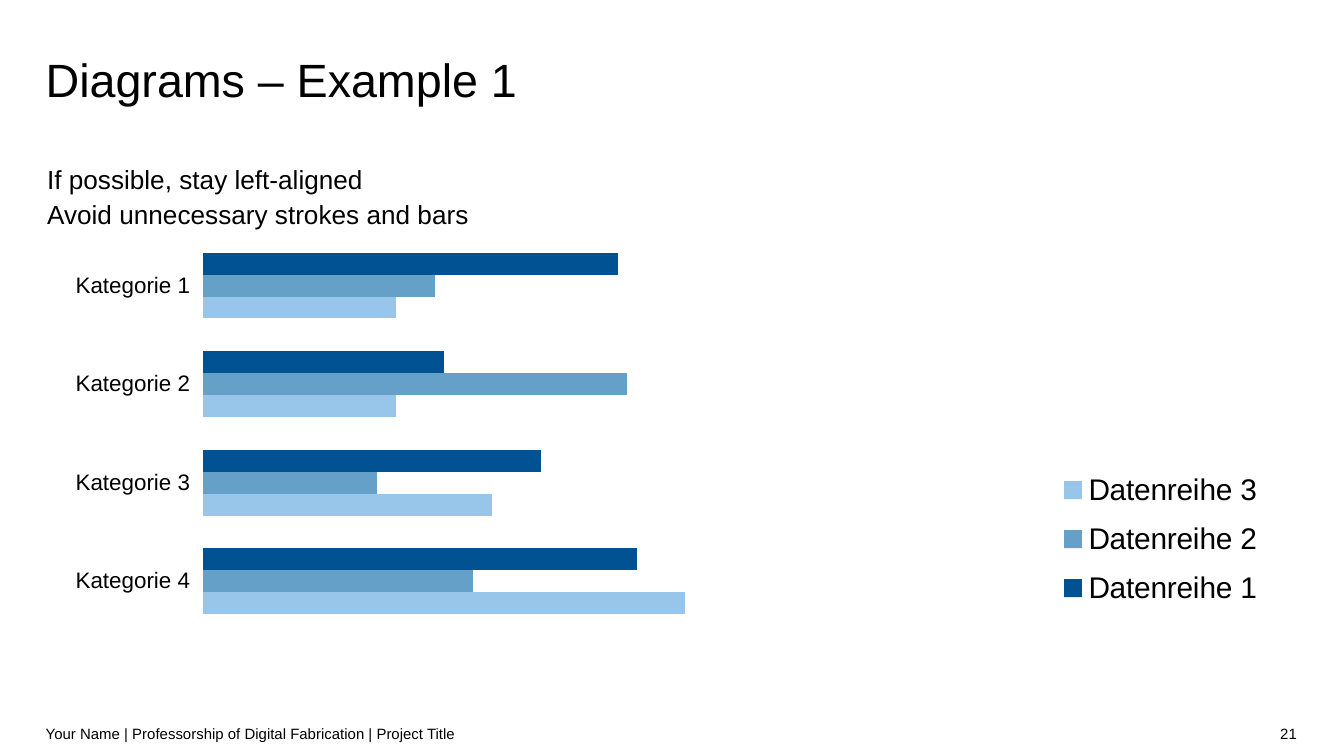
from lxml import etree
from pptx import Presentation
from pptx import util as u
from pptx.chart.data import CategoryChartData
from pptx.dml.color import RGBColor
from pptx.enum import chart as charts, text
from pptx.oxml import ns

FONT = "Arial"
BLACK = "000000"
SERIES = [
    ("Datenreihe 1", (86, 50, 70, 90), "005293"),
    ("Datenreihe 2", (48, 88, 36, 56), "64A0C8"),
    ("Datenreihe 3", (40, 40, 60, 100), "98C6EA"),
]


def colour(value):
    return RGBColor.from_string(value)


def style(font, size):
    font.name = FONT
    font.size = u.Pt(size)
    font.color.rgb = colour(BLACK)


def place(shape, box):
    shape.left, shape.top, shape.width, shape.height = map(u.Inches, box)


def write(shape, lines, size, align=text.PP_ALIGN.LEFT, inset=0,
          anchor=text.MSO_ANCHOR.TOP):
    """Fill a text shape with one paragraph of lines."""
    frame = shape.text_frame
    frame.word_wrap = True
    frame.auto_size = text.MSO_AUTO_SIZE.NONE
    frame.vertical_anchor = anchor
    frame.margin_left = frame.margin_right = 0
    frame.margin_top = frame.margin_bottom = u.Inches(inset)
    para = frame.paragraphs[0]
    para.alignment = align
    para.space_before = u.Pt(0)
    for index, line in enumerate(lines):
        if index:
            para.add_line_break()
        span = para.add_run()
        span.text = line
        style(span.font, size)
    return para


def add_heading(page, box):
    title = page.shapes.title
    place(title, box)
    write(title, ["Diagrams – Example 1"], 25).line_spacing = u.Pt(32)
    title.text_frame.auto_size = text.MSO_AUTO_SIZE.SHAPE_TO_FIT_TEXT


def add_body(page, box):
    body = page.placeholders[1]
    place(body, box)
    para = write(body, ["If possible, stay left-aligned",
                        "Avoid unnecessary strokes and bars"], 14)
    para.line_spacing = 1.14
    # No bullet, no hanging indent
    properties = para._p.get_or_add_pPr()
    properties.set("marL", "0")
    properties.set("indent", "0")
    etree.SubElement(properties, ns.qn("a:buNone"))


def set_layout(element, before, target, fractions):
    """Pin a chart part to fractions (x, y, w, h) of the chart area."""
    for old in element.findall(ns.qn("c:layout")):
        element.remove(old)
    layout = etree.Element(ns.qn("c:layout"))
    manual = etree.SubElement(layout, ns.qn("c:manualLayout"))
    settings = [("layoutTarget", target)] if target else []
    settings += [("xMode", "edge"), ("yMode", "edge")]
    settings += zip("xywh", fractions)
    for name, value in settings:
        etree.SubElement(manual, ns.qn("c:" + name)).set("val", str(value))
    before.addprevious(layout)


def add_bar_chart(page, box):
    data = CategoryChartData()
    data.categories = [f"Kategorie {number}" for number in range(1, 5)]
    for name, values, _ in SERIES:
        data.add_series(name, values)
    chart = page.shapes.add_chart(
        charts.XL_CHART_TYPE.BAR_CLUSTERED, *map(u.Inches, box), data).chart
    chart.has_title = False
    style(chart.font, 16)

    # Bars
    plot = chart.plots[0]
    plot.gap_width = 150
    plot.overlap = 0
    plot.vary_by_categories = False
    for series, (_, _, fill) in zip(plot.series, SERIES):
        series.format.fill.solid()
        series.format.fill.fore_color.rgb = colour(fill)
        series.invert_if_negative = False

    # Axes
    categories = chart.category_axis
    categories.reverse_order = True
    categories.format.line.fill.background()
    style(categories.tick_labels.font, 12)
    scale = chart.value_axis
    scale.minimum_scale, scale.maximum_scale = 0, 120
    scale.has_major_gridlines = False
    scale.visible = False

    # Legend and plot area
    chart.has_legend = True
    legend = chart.legend
    legend.position = charts.XL_LEGEND_POSITION.RIGHT
    legend.include_in_layout = False
    style(legend.font, 16)
    overlay = legend._element.find(ns.qn("c:overlay"))
    set_layout(legend._element, overlay, None, (0.8, 0.53, 0.18, 0.39))
    area = chart._chartSpace.chart.plotArea
    set_layout(area, area.find(ns.qn("c:barChart")), "inner",
               (0.125, 0.003, 0.462, 0.94))


def add_footer(page, box):
    left, top, width, height = box
    number_width = 2.24
    split = width - number_width
    parts = [
        (split, number_width, text.PP_ALIGN.RIGHT, "21"),
        (0, split, text.PP_ALIGN.LEFT,
         "Your Name | Professorship of Digital Fabrication | Project Title"),
    ]
    for offset, part_width, align, line in parts:
        label = page.shapes.add_textbox(0, 0, 0, 0)
        place(label, (left + offset, top, part_width, height))
        write(label, [line], 8, align, 0.05, text.MSO_ANCHOR.MIDDLE)


def main():
    deck = Presentation()
    # Widescreen, 16:9
    deck.slide_width, deck.slide_height = u.Inches(10), u.Inches(10 * 9 / 16)
    page = deck.slides.add_slide(deck.slide_layouts[1])
    add_heading(page, (0.34, 0.35, 9.31, 0.42))
    add_body(page, (0.35, 1.18, 9.31, 0.51))
    add_bar_chart(page, (0.35, 1.75, 9.31, 3.12))
    add_footer(page, (0.34, 5.31, 9.31, 0.3))
    deck.save("out.pptx")


if __name__ == "__main__":
    main()
